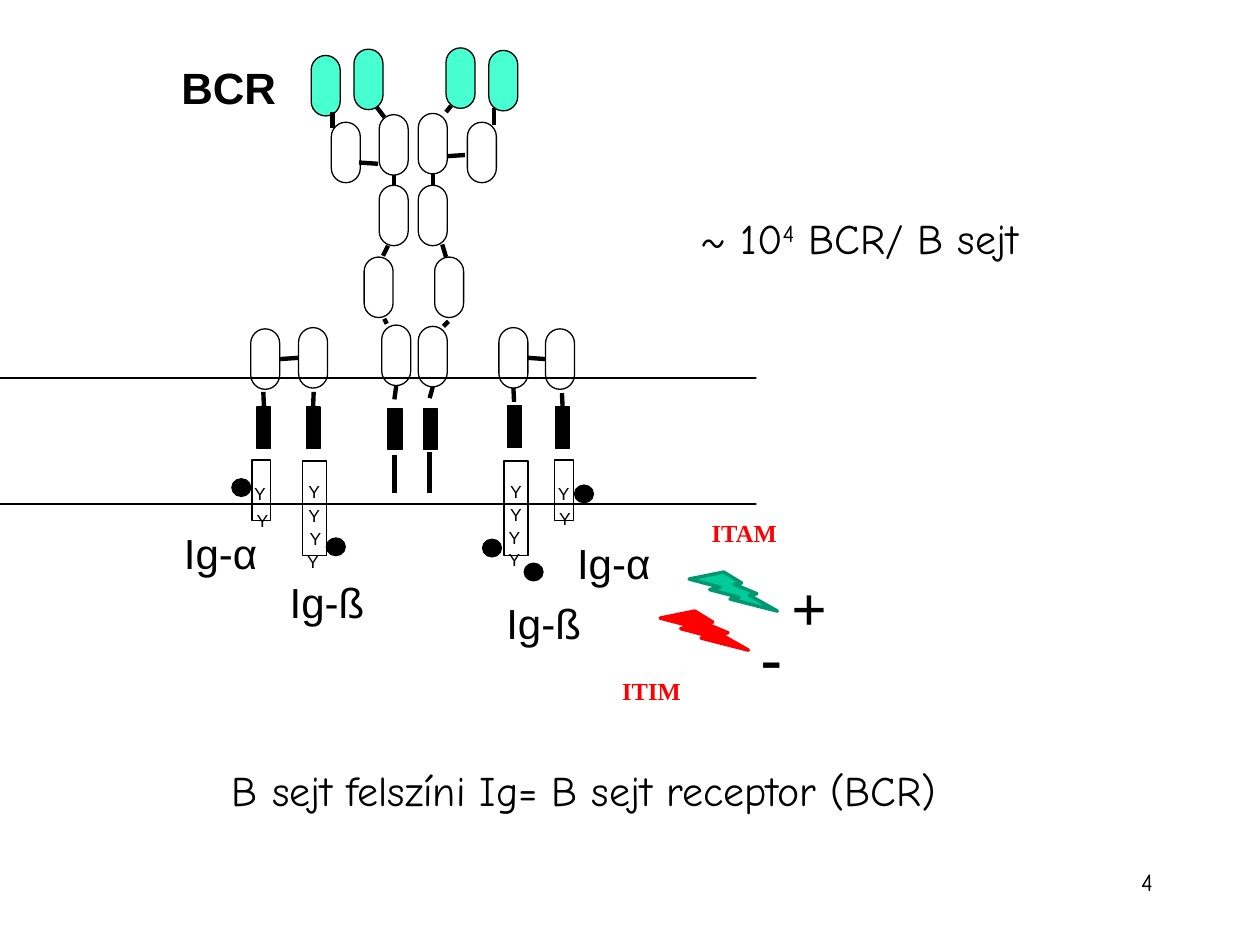
from typing import NamedTuple

from lxml import etree
from pptx import Presentation
from pptx.dml.color import RGBColor
from pptx.enum.shapes import MSO_CONNECTOR, MSO_SHAPE
from pptx.enum.text import MSO_ANCHOR, MSO_AUTO_SIZE, PP_ALIGN
from pptx.oxml.ns import qn
from pptx.util import Inches, Pt

PILL, RECT = MSO_SHAPE.ROUNDED_RECTANGLE, MSO_SHAPE.RECTANGLE
OVAL, BOLT = MSO_SHAPE.OVAL, MSO_SHAPE.LIGHTNING_BOLT
STRAIGHT = MSO_CONNECTOR.STRAIGHT
LEFT, CENTER, RIGHT = PP_ALIGN.LEFT, PP_ALIGN.CENTER, PP_ALIGN.RIGHT
TOP = MSO_ANCHOR.TOP
FIT, FIXED = MSO_AUTO_SIZE.SHAPE_TO_FIT_TEXT, MSO_AUTO_SIZE.NONE
SANS, HAND, SERIF = "Arial", "Comic Neue", "Times New Roman"
BLACK, WHITE, RED, AQUA = "000000", "FFFFFF", "FF0000", "47FFD1"
GREEN, DARK_GREEN = "00CC99", "009771"
BOTTOM_SIDE, TOP_SIDE, LEFT_SIDE, RIGHT_SIDE = 2, 0, 1, 3


class Domain(NamedTuple):
    name: str
    x: float
    y: float
    fill: str | None = None


class Link(NamedTuple):
    x1: float
    y1: float
    x2: float
    y2: float
    begin: tuple[str, int] | None = None
    end: tuple[str, int] | None = None


class Tail(NamedTuple):
    x: float
    y: float
    width: float
    height: float
    tyrosines: list[tuple[float, float]]


class Label(NamedTuple):
    text: str
    x: float
    y: float
    width: float
    height: float
    style: dict


MEMBRANES = [(0.07, 3.12), (0.1, 3.64)]
MEMBRANE_END = 5.86
DOMAINS = [
    Domain("VH left", 2.81, 0.39, AQUA), Domain("VH right", 3.54, 0.38, AQUA),
    Domain("CH1 left", 3.01, 0.91), Domain("CH1 right", 3.32, 0.9),
    Domain("CH2 left", 3.01, 1.47), Domain("CH2 right", 3.32, 1.47),
    Domain("CH3 left", 2.89, 2.04), Domain("CH3 right", 3.45, 2.04),
    Domain("CH4 left", 3.03, 2.58), Domain("CH4 right", 3.32, 2.59),
    Domain("VL left", 2.47, 0.44, AQUA), Domain("VL right", 3.88, 0.4, AQUA),
    Domain("CL left", 2.63, 0.97, WHITE), Domain("CL right", 3.71, 0.97, WHITE),
    Domain("alpha left", 1.99, 2.61), Domain("beta left", 2.37, 2.6),
    Domain("beta right", 3.96, 2.6), Domain("alpha right", 4.33, 2.61),
]
ANCHORS = [
    Domain("heavy anchor left", 3.08, 3.24), Domain("heavy anchor right", 3.36, 3.24),
    Domain("alpha anchor left", 2.04, 3.23), Domain("beta anchor left", 2.43, 3.23),
    Domain("beta anchor right", 4.03, 3.22), Domain("alpha anchor right", 4.41, 3.23),
]
LINKS = [
    Link(2.64, 0.89, 2.64, 1.02), Link(2.85, 1.29, 3, 1.3),
    Link(3.55, 1.24, 3.69, 1.23), Link(3.92, 0.86, 3.92, 0.99),
    Link(2.99, 0.85, 3.05, 0.93), Link(3.58, 0.84, 3.54, 0.89),
    Link(3.11, 1.39, 3.12, 1.46, ("CH1 left", BOTTOM_SIDE), ("CH2 left", TOP_SIDE)),
    Link(3.45, 1.39, 3.45, 1.46, ("CH1 right", BOTTOM_SIDE), ("CH2 right", TOP_SIDE)),
    Link(3.08, 1.95, 3.04, 2.03), Link(3.51, 1.94, 3.54, 2.04),
    Link(3.56, 2.55, 3.52, 2.59), Link(3.05, 2.53, 3.07, 2.57),
    Link(3.13, 3.06, 3.13, 3.17, ("CH4 left", BOTTOM_SIDE)),
    Link(3.41, 3.06, 3.41, 3.16, ("CH4 right", BOTTOM_SIDE)),
    Link(4.08, 3.07, 4.08, 3.19, ("beta right", BOTTOM_SIDE)),
    Link(4.46, 3.12, 4.46, 3.24, None, ("alpha anchor right", TOP_SIDE)),
    Link(2.49, 3.11, 2.49, 3.22, None, ("beta anchor left", TOP_SIDE)),
    Link(2.09, 3.11, 2.09, 3.23, None, ("alpha anchor left", TOP_SIDE)),
    Link(2.22, 2.86, 2.36, 2.86, ("alpha left", RIGHT_SIDE), ("beta left", LEFT_SIDE)),
    Link(4.19, 2.86, 4.33, 2.85, ("beta right", RIGHT_SIDE), ("alpha right", LEFT_SIDE)),
    Link(3.13, 3.61, 3.13, 3.91), Link(3.41, 3.59, 3.41, 3.91),
]
TAILS = [
    Tail(2, 3.65, 0.15, 0.48, [(2.11, 3.83), (2.13, 4.05)]),
    Tail(2.4, 3.66, 0.19, 0.75, [(2.54, 3.82), (2.54, 4.01), (2.55, 4.19), (2.53, 4.37)]),
    Tail(4, 3.66, 0.19, 0.75, [(4.14, 3.82), (4.14, 4), (4.13, 4.18), (4.13, 4.36)]),
    Tail(4.4, 3.65, 0.15, 0.48, [(4.52, 3.83), (4.53, 4.03)]),
]
KINASES = [(2.59, 4.27), (3.83, 4.28), (4.16, 4.47), (4.56, 3.85), (1.84, 3.8)]
TYROSINE = dict(size=10, align=RIGHT, inset=0, fit=FIXED)
CHAIN = dict(size=24, align=RIGHT)
MOTIF = dict(size=14, font=SERIF, color=RED, bold=True, wrap=True)
SIGNAL = dict(size=36, font=SERIF, bold=True)
LABELS = [
    Label("BCR", 1.44, 0.48, 0.75, 0.39,
          dict(size=25, bold=True, align=RIGHT, inset=0, fit=FIXED)),
    Label("Ig-ß", 3.91, 4.69, 0.8, 0.51, CHAIN),
    Label("Ig-α", 4.45, 4.22, 0.81, 0.51, CHAIN),
    Label("Ig-α", 1.33, 4.14, 0.81, 0.51, CHAIN),
    Label("Ig-ß", 2.19, 4.53, 0.8, 0.51, CHAIN),
    Label("~ 10^4^ BCR/ B sejt", 5.31, 1.64, 3.02, 0.51,
          dict(size=24, font=HAND, align=CENTER)),
    Label("4", 7.17, 6.83, 2.08, 0.5,
          dict(size=14, font=HAND, align=RIGHT, wrap=True, fit=FIXED)),
    Label("ITAM", 5.55, 4.06, 1.33, 0.34, MOTIF),
    Label("ITIM", 4.84, 5.32, 1.33, 0.34, MOTIF),
    Label("+", 6.18, 4.46, 0.49, 0.71, SIGNAL),
    Label("-", 5.94, 4.85, 0.37, 0.71, SIGNAL),
]


def rgb(value: str) -> RGBColor:
    return RGBColor.from_string(value)


def paint(shape, fill: str | None, line: str = BLACK, weight: float = 0.75) -> None:
    shape.shadow.inherit = False
    if fill:
        shape.fill.solid()
        shape.fill.fore_color.rgb = rgb(fill)
    else:
        shape.fill.background()
    shape.line.color.rgb = rgb(line)
    shape.line.width = Pt(weight)


def draw_shape(slide, kind, x: float, y: float, width: float, height: float,
               fill: str | None = None, line: str = BLACK, weight: float = 0.75):
    shape = slide.shapes.add_shape(kind, Inches(x), Inches(y), Inches(width), Inches(height))
    paint(shape, fill, line, weight)
    if kind == PILL:
        shape.adjustments[0] = 0.5
    return shape


def draw_membrane(slide, x: float, y: float) -> None:
    builder = slide.shapes.build_freeform(MEMBRANE_END, y, scale=Inches(1))
    builder.add_line_segments([(x, y), (x, y + 0.06), (MEMBRANE_END, y + 0.06)], close=False)
    paint(builder.convert_to_shape(), None)


def draw_link(slide, link: Link, parts: dict) -> None:
    bond = slide.shapes.add_connector(STRAIGHT, *map(Inches, link[:4]))
    if link.begin:
        bond.begin_connect(parts[link.begin[0]], link.begin[1])
    if link.end:
        bond.end_connect(parts[link.end[0]], link.end[1])
    bond.line.color.rgb = rgb(BLACK)
    bond.line.width = Pt(2.5)
    etree.SubElement(bond._element.spPr, qn("a:effectLst"))


def write(shape, text: str, *, size: float, font: str = SANS, color: str = BLACK,
          bold: bool = False, align=LEFT, wrap: bool = False, fit=FIT,
          inset: float | None = None) -> None:
    frame = shape.text_frame
    frame.word_wrap, frame.auto_size, frame.vertical_anchor = wrap, fit, TOP
    if inset is not None:
        frame.margin_left = frame.margin_right = Inches(inset)
        frame.margin_top = frame.margin_bottom = Inches(inset)
    paragraph = frame.paragraphs[0]
    paragraph.alignment = align
    for index, piece in enumerate(text.split("^")):
        run = paragraph.add_run()
        run.text = piece
        run.font.name, run.font.size, run.font.bold = font, Pt(size), bold
        run.font.color.rgb = rgb(color)
        if index % 2:
            run.font._element.set("baseline", "30000")


def draw_label(slide, label: Label) -> None:
    box = slide.shapes.add_textbox(*map(Inches, label[1:5]))
    write(box, label.text, **label.style)


def main() -> None:
    deck = Presentation()
    deck.slide_width, deck.slide_height = Inches(10), Inches(7.5)
    slide = deck.slides.add_slide(deck.slide_layouts[5])
    title = slide.shapes.title
    title.left, title.top, title.width, title.height = map(Inches, (1.36, 6.02, 6.55, 0.51))
    write(title, "B sejt felszíni Ig= B sejt receptor (BCR)", size=24, font=HAND, align=CENTER)

    for x, y in MEMBRANES:
        draw_membrane(slide, x, y)
    parts = {d.name: draw_shape(slide, PILL, d.x, d.y, 0.23, 0.48, d.fill) for d in DOMAINS}
    for anchor in ANCHORS:
        parts[anchor.name] = draw_shape(slide, RECT, anchor.x, anchor.y, 0.11, 0.33, BLACK)
    for link in LINKS:
        draw_link(slide, link, parts)
    for tail in TAILS:
        draw_shape(slide, RECT, *tail[:4])
        for right, top in tail.tyrosines:
            draw_label(slide, Label("Y", right - 0.1, top, 0.1, 0.16, TYROSINE))
    for x, y in KINASES:
        draw_shape(slide, OVAL, x, y, 0.15, 0.14, BLACK)
    draw_shape(slide, BOLT, 5.47, 4.54, 0.7, 0.31, GREEN, DARK_GREEN, 2)
    draw_shape(slide, BOLT, 5.24, 4.85, 0.7, 0.31, RED, RED, 2)
    for label in LABELS:
        draw_label(slide, label)
    deck.save("out.pptx")


if __name__ == "__main__":
    main()
